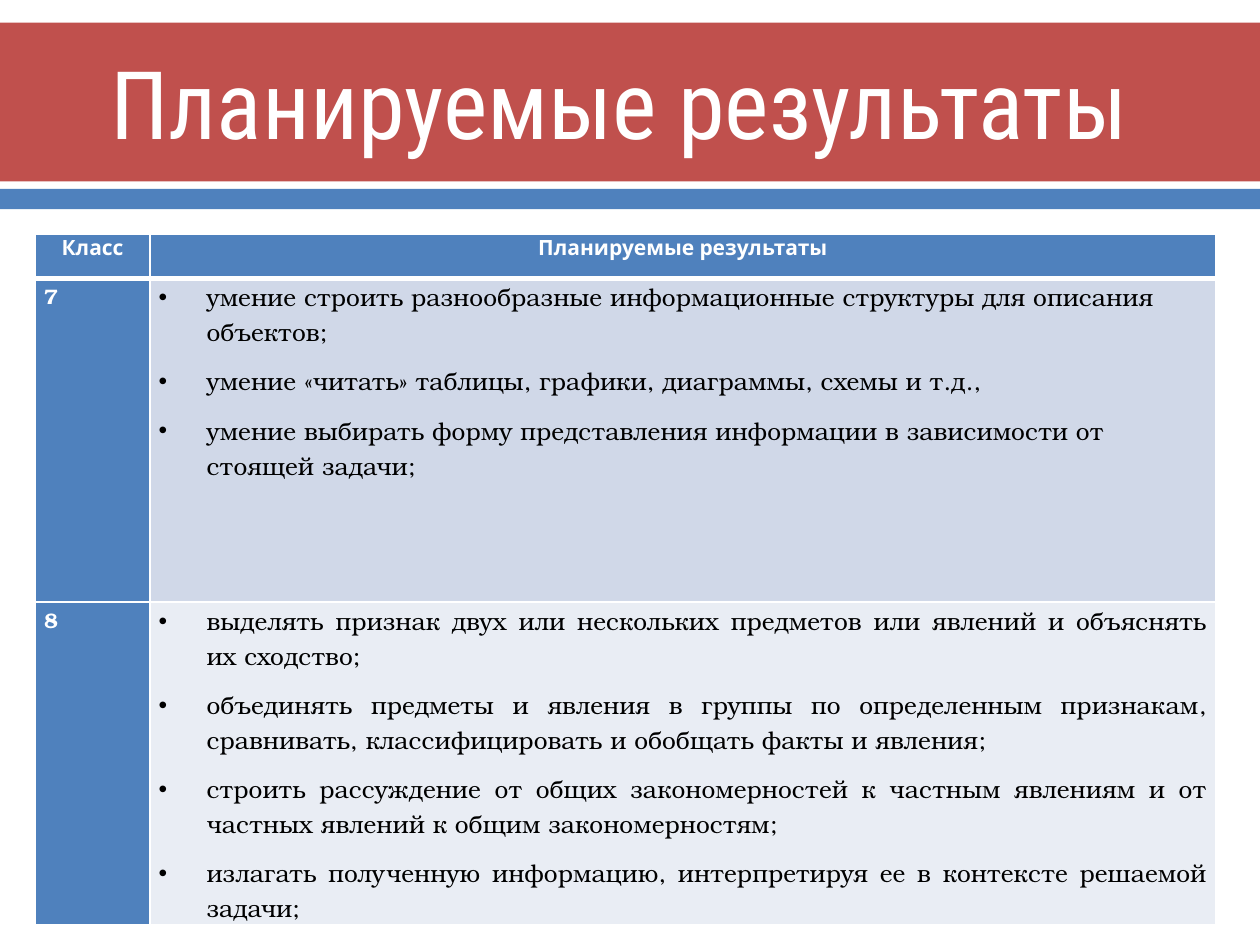
from dataclasses import dataclass

from lxml.etree import SubElement
from pptx import Presentation
from pptx.dml.color import RGBColor as RGB
from pptx.enum.shapes import MSO_SHAPE as SHAPE
from pptx.enum.text import MSO_ANCHOR as ANCHOR, PP_ALIGN as ALIGN
from pptx.oxml.ns import qn
from pptx.util import Inches, Pt


@dataclass(frozen=True)
class Theme:
    red: str = "C0504D"
    blue: str = "4F81BD"
    white: str = "FFFFFF"
    black: str = "000000"
    title_font: str = "Roboto Condensed"
    head_font: str = "Karla"
    body_font: str = "TeX Gyre Bonum"
    title_size: int = 54
    label_size: int = 12
    body_size: int = 14


@dataclass(frozen=True)
class Band:
    top: float
    height: float
    color: str


@dataclass(frozen=True)
class Grade:
    label: str
    results: tuple[str, ...]
    fill: str
    align: ALIGN


THEME = Theme()
BANDS = (Band(0.18, 1.26, THEME.red), Band(1.5, 0.16, THEME.blue))
TITLE = "Планируемые результаты"
HEADERS = ("Класс", TITLE)
GRADES = (
    Grade("7", (
        "умение строить разнообразные информационные структуры для описания объектов;",
        "умение «читать» таблицы, графики, диаграммы, схемы и т.д.,",
        "умение выбирать форму представления информации в зависимости от стоящей задачи;",
    ), "D0D8E8", ALIGN.LEFT),
    Grade("8", (
        "выделять признак двух или нескольких предметов или явлений и объяснять их сходство;",
        "объединять предметы и явления в группы по определенным признакам, "
        "сравнивать, классифицировать и обобщать факты и явления;",
        "строить рассуждение от общих закономерностей к частным явлениям "
        "и от частных явлений к общим закономерностям;",
        "излагать полученную информацию, интерпретируя ее в контексте решаемой задачи;",
    ), "E9EDF4", ALIGN.JUSTIFY),
)
COL_WIDTHS = (0.91, 8.46)
ROW_HEIGHTS = (0.35, 2.57, 2.28)


def style_runs(p, font: str, size: int, color: str, bold: bool = False) -> None:
    for r in p.runs:
        r.font.name, r.font.size, r.font.bold = font, Pt(size), bold
        r.font.color.rgb = RGB.from_string(color)


def add_band(slide, band: Band) -> None:
    s = slide.shapes.add_shape(SHAPE.RECTANGLE, 0, Inches(band.top),
                               Inches(10), Inches(band.height))
    s.shadow.inherit = False
    s.fill.solid()
    s.fill.fore_color.rgb = RGB.from_string(band.color)
    s.line.fill.background()


def set_borders(cell, **widths: float) -> None:
    """Draw white lines on the sides L, R, T and B, 1 pt unless given."""
    tc_pr = cell._tc.get_or_add_tcPr()
    for side in "LRTB":
        ln = SubElement(tc_pr, qn(f"a:ln{side}"), w=str(Pt(widths.get(side, 1))))
        SubElement(SubElement(ln, qn("a:solidFill")), qn("a:srgbClr"), val=THEME.white)


def add_bullet(p) -> None:
    p_pr = p._p.get_or_add_pPr()
    p_pr.set("marL", str(Inches(0.38)))
    p_pr.set("indent", str(Inches(-0.38)))
    SubElement(p_pr, qn("a:buFont"), typeface="Arial")
    SubElement(p_pr, qn("a:buChar"), char="•")


def fill_cell(cell, lines: tuple[str, ...], fill: str, font: str, size: int, color: str,
              align: ALIGN = ALIGN.LEFT, bold: bool = False, bullets: bool = False,
              after: float = 8, **borders: float) -> None:
    set_borders(cell, **borders)
    cell.fill.solid()
    cell.fill.fore_color.rgb = RGB.from_string(fill)
    cell.margin_left = cell.margin_right = Inches(0.07)
    cell.margin_top = cell.margin_bottom = 0
    cell.text_frame.text = "\n".join(lines)
    for p in cell.text_frame.paragraphs:
        p.alignment, p.line_spacing, p.space_after = align, 1.07, Pt(after)
        if bullets:
            add_bullet(p)
        style_runs(p, font, size, color, bold)


def add_title(slide) -> None:
    tf = slide.shapes.add_textbox(Inches(0.5), Inches(0.2), Inches(9), Inches(1.22)).text_frame
    tf.word_wrap = True
    tf.vertical_anchor = ANCHOR.MIDDLE
    tf.text = TITLE + " "
    p = tf.paragraphs[0]
    p.alignment = ALIGN.CENTER
    style_runs(p, THEME.title_font, THEME.title_size, THEME.white)


def add_results_table(slide) -> None:
    table = slide.shapes.add_table(
        len(ROW_HEIGHTS), len(COL_WIDTHS), Inches(0.28), Inches(1.86),
        Inches(sum(COL_WIDTHS)), Inches(sum(ROW_HEIGHTS))).table
    for col, width in zip(table.columns, COL_WIDTHS):
        col.width = Inches(width)
    for row, height in zip(table.rows, ROW_HEIGHTS):
        row.height = Inches(height)

    # Header row
    for c, header in enumerate(HEADERS):
        fill_cell(table.cell(0, c), (header,), THEME.blue, THEME.head_font,
                  THEME.label_size, THEME.white, ALIGN.CENTER, bold=True, after=0, B=3)

    # One row per grade
    for i, grade in enumerate(GRADES, start=1):
        top = 3 if i == 1 else 1
        fill_cell(table.cell(i, 0), (grade.label,), THEME.blue, THEME.body_font,
                  THEME.label_size, THEME.white, bold=True, T=top)
        fill_cell(table.cell(i, 1), grade.results, grade.fill, THEME.body_font,
                  THEME.body_size, THEME.black, grade.align, bullets=True, T=top)


def main() -> None:
    prs = Presentation()
    prs.slide_width, prs.slide_height = Inches(10), Inches(7.5)
    slide = prs.slides.add_slide(prs.slide_layouts[6])
    for band in BANDS:
        add_band(slide, band)
    add_results_table(slide)
    add_title(slide)
    prs.save("out.pptx")


if __name__ == "__main__":
    main()
